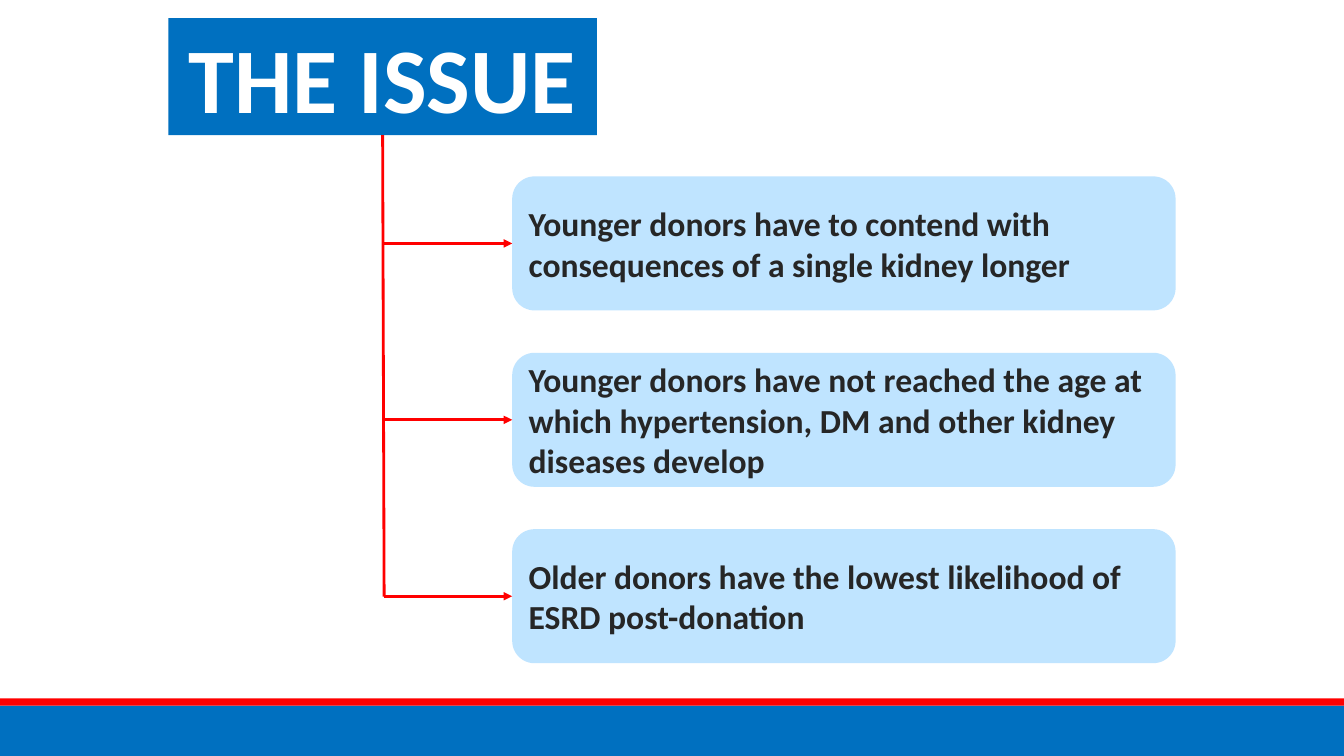
from lxml.etree import SubElement
from pptx import Presentation
from pptx.dml.color import RGBColor
from pptx.enum.shapes import MSO_CONNECTOR as Conn, MSO_SHAPE as Shape
from pptx.enum.text import MSO_ANCHOR as Anchor, MSO_AUTO_SIZE as AutoSize, PP_ALIGN as Align
from pptx.oxml import parse_xml
from pptx.oxml.ns import nsdecls, qn
from pptx.util import Inches, Pt

COLORS = {
    "blue": "0070C0",
    "light": "BFE4FF",
    "red": "FF0000",
    "dark": "262626",
    "white": "FFFFFF",
}
POINTS = [
    "Younger donors have to contend with consequences of a single kidney longer",
    "Younger donors have not reached the age at which hypertension, DM and other "
    "kidney diseases develop",
    "Older donors have the lowest likelihood of ESRD post-donation",
]


def rgb(name):
    return RGBColor.from_string(COLORS[name])


class SlideBuilder:
    font = "Calibri"
    line_width = Pt(2)

    def __init__(self, slide):
        self.slide = slide

    def fill(self, sp, color):
        sp.fill.solid()
        sp.fill.fore_color.rgb = rgb(color)
        sp.line.fill.background()

    def set_text(self, sp, text, size, color, align):
        tf = sp.text_frame
        tf.text = text
        tf.word_wrap = True
        tf.auto_size = AutoSize.NONE
        tf.vertical_anchor = Anchor.MIDDLE
        p = tf.paragraphs[0]
        p.alignment = align
        f = p.runs[0].font
        f.name, f.size, f.bold = self.font, Pt(size), True
        f.color.rgb = rgb(color)

    def title(self, text, x, y, w, h):
        sp = self.slide.shapes.title
        sp.left, sp.top, sp.width, sp.height = map(Inches, (x, y, w, h))
        # Rounded outline for the placeholder
        sp._element.spPr.append(parse_xml(
            f'<a:prstGeom {nsdecls("a")} prst="roundRect"><a:avLst/></a:prstGeom>'))
        self.fill(sp, "blue")
        self.set_text(sp, text, 66, "white", Align.CENTER)
        return sp

    def box(self, kind, x, y, w, h, color):
        sp = self.slide.shapes.add_shape(kind, *map(Inches, (x, y, w, h)))
        sp.shadow.inherit = False
        self.fill(sp, color)
        return sp

    def card(self, text, x, y, w, h):
        sp = self.box(Shape.ROUNDED_RECTANGLE, x, y, w, h, "light")
        self.set_text(sp, text, 24, "dark", Align.LEFT)
        return sp

    def line(self, x1, y1, x2, y2, arrow=False):
        c = self.slide.shapes.add_connector(
            Conn.STRAIGHT, *map(Inches, (x1, y1, x2, y2)))
        c.line.color.rgb = rgb("red")
        c.line.width = self.line_width
        if arrow:
            ln = c._element.spPr.find(qn("a:ln"))
            SubElement(ln, qn("a:tailEnd"), type="triangle")
        SubElement(c._element.spPr, qn("a:effectLst"))
        return c


def main():
    prs = Presentation()
    prs.slide_width, prs.slide_height = Inches(13.33), Inches(7.5)
    b = SlideBuilder(prs.slides.add_slide(prs.slide_layouts[5]))

    # Footer bands
    b.box(Shape.RECTANGLE, 0, 7, 13.33, 0.5, "blue")
    b.box(Shape.RECTANGLE, 0, 6.93, 13.33, 0.07, "red")

    # Title and trunk line
    title = b.title("THE ISSUE", 1.67, 0.18, 4.25, 1.16)
    trunk_x, card_x, card_h = 3.81, 5.08, 1.33
    trunk = b.line(3.79, 1.34, trunk_x, 5.92)
    trunk.begin_connect(title, 2)

    # Cards, each with a branch arrow
    for i, text in enumerate(POINTS):
        y = 1.75 + 1.75 * i
        card = b.card(text, card_x, y, 6.58, card_h)
        mid = y + card_h / 2
        branch = b.line(trunk_x, mid, card_x, mid, arrow=True)
        branch.end_connect(card, 1)

    prs.save("out.pptx")


if __name__ == "__main__":
    main()
